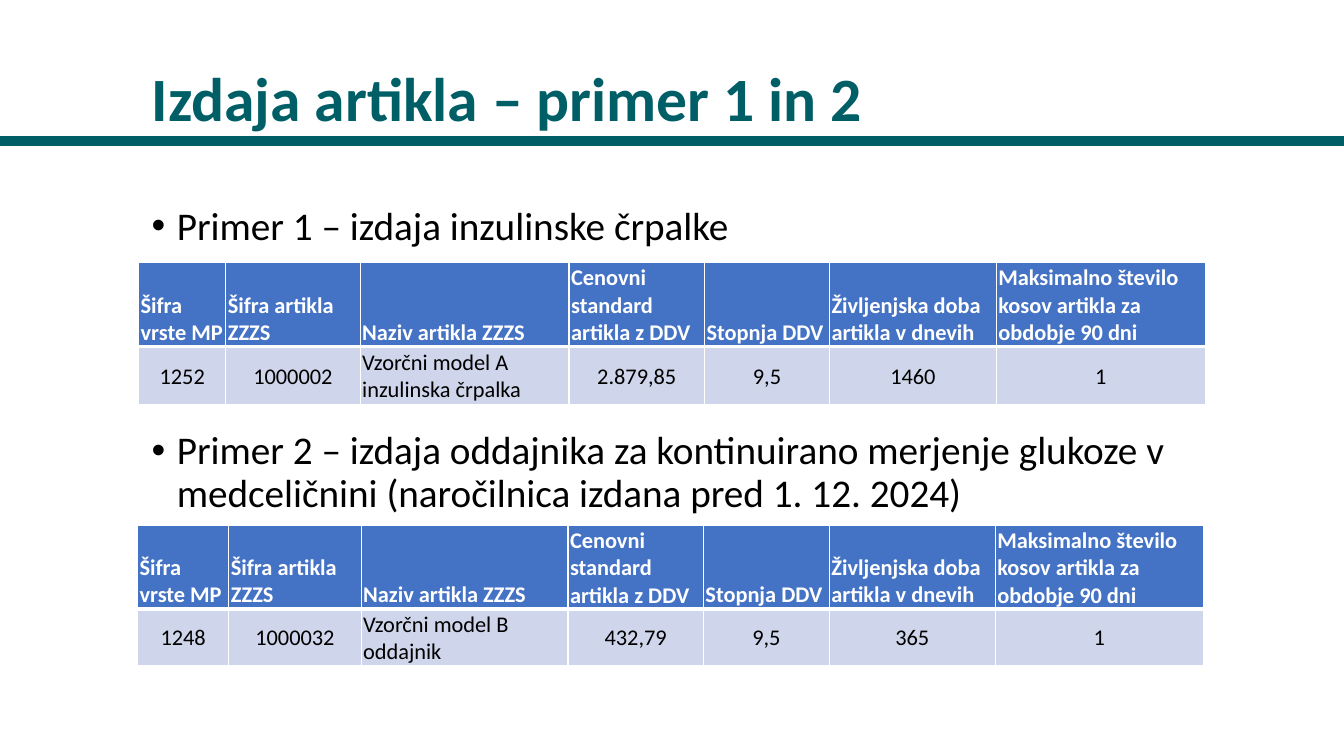
from lxml import etree
from pptx import Presentation, util as u
from pptx.dml.color import RGBColor
from pptx.enum import shapes, text
from pptx.oxml.ns import qn

TEAL, BLUE, PALE, WHITE, BLACK = "005E66", "4472C4", "CFD5EA", "FFFFFF", "000000"
HEADS = ["Šifra vrste MP", "Šifra artikla ZZZS", "Naziv artikla ZZZS",
         "Cenovni standard artikla z DDV", "Stopnja DDV",
         "Življenjska doba artikla v dnevih",
         "Maksimalno število kosov artikla za obdobje 90 dni"]
PUMP = ["1252", "1000002", "Vzorčni model A inzulinska črpalka", "2.879,85", "9,5", "1460", "1"]
SENDER = ["1248", "1000032", "Vzorčni model B oddajnik", "432,79", "9,5", "365", "1"]
NAME_COL = 2


def px(n):
    return u.Emu(n * 9525)


def rgb(code):
    return RGBColor.from_string(code)


class Deck:
    font = "Calibri"

    def __init__(self, width, height):
        self.prs = Presentation()
        self.prs.slide_width, self.prs.slide_height = px(width), px(height)
        self.slide = self.prs.slides.add_slide(self.prs.slide_layouts[5])

    def run(self, para, words, size, color, bold=False):
        run = para.add_run()
        run.text = words
        font = run.font
        font.name, font.size, font.bold = self.font, u.Pt(size), bold
        font.color.rgb = rgb(color)

    def title(self, words, x, y, w, h):
        box = self.slide.shapes.title
        box.left, box.top, box.width, box.height = map(px, (x, y, w, h))
        frame = box.text_frame
        frame.auto_size = text.MSO_AUTO_SIZE.NONE
        frame.vertical_anchor = text.MSO_ANCHOR.BOTTOM
        para = frame.paragraphs[0]
        para.alignment = text.PP_ALIGN.LEFT
        para.line_spacing = 0.9
        self.run(para, words, 44, TEAL, True)

    def line(self, x1, y1, x2, y2, color, weight):
        rule = self.slide.shapes.add_connector(
            shapes.MSO_CONNECTOR.STRAIGHT, *map(px, (x1, y1, x2, y2)))
        rule.line.color.rgb = rgb(color)
        rule.line.width = u.Pt(weight)
        etree.SubElement(rule._element.spPr, qn("a:effectLst"))

    def bullets(self, items, gap, x, y, w, h):
        """Write bulleted items with a gap in points between them."""
        frame = self.slide.shapes.add_textbox(*map(px, (x, y, w, h))).text_frame
        frame.word_wrap = True
        for i, words in enumerate(items):
            para = frame.add_paragraph() if i else frame.paragraphs[0]
            props = para._p.get_or_add_pPr()
            props.set("marL", str(px(24)))
            props.set("indent", str(-px(24)))
            etree.SubElement(props, qn("a:buFont"), typeface="Arial")
            etree.SubElement(props, qn("a:buChar"), char="•")
            para.line_spacing = 0.9
            if i:
                para.space_before = u.Pt(gap)
            self.run(para, words, 28, BLACK)

    def cell(self, cell, words, fill, color, head, center):
        cell.margin_left = cell.margin_right = cell.margin_top = px(2)
        cell.margin_bottom = 0
        cell.vertical_anchor = text.MSO_ANCHOR.BOTTOM if head else text.MSO_ANCHOR.MIDDLE
        props = cell._tc.get_or_add_tcPr()
        for side in "LRTB":
            # The rule between header and data is the thick one.
            thick = side == ("B" if head else "T")
            edge = etree.SubElement(props, qn("a:ln" + side),
                                    w=str(u.Pt(3 if thick else 1)))
            solid = etree.SubElement(edge, qn("a:solidFill"))
            etree.SubElement(solid, qn("a:srgbClr"), val=WHITE)
        cell.fill.solid()
        cell.fill.fore_color.rgb = rgb(fill)
        para = cell.text_frame.paragraphs[0]
        para.alignment = text.PP_ALIGN.CENTER if center else text.PP_ALIGN.LEFT
        self.run(para, words, 16, color, head)

    def table(self, data, x, y, cols, rows):
        grid = self.slide.shapes.add_table(
            len(rows), len(cols), *map(px, (x, y, sum(cols), sum(rows)))).table
        for col, width in zip(grid.columns, cols):
            col.width = px(width)
        for row, height in zip(grid.rows, rows):
            row.height = px(height)
        for i, (head, value) in enumerate(zip(HEADS, data)):
            self.cell(grid.cell(0, i), head, BLUE, WHITE, True, False)
            self.cell(grid.cell(1, i), value, PALE, BLACK, False, i != NAME_COL)


def main():
    deck = Deck(1280, 720)
    deck.line(0, 134, 1280, 134, TEAL, 7)
    deck.title("Izdaja artikla – primer 1 in 2", 135, 14, 1057, 119)
    deck.bullets(["Primer 1 – izdaja inzulinske črpalke",
                  "Primer 2 – izdaja oddajnika za kontinuirano merjenje glukoze v "
                  "medceličnini (naročilnica izdana pred 1. 12. 2024)"],
                 130, 135, 192, 1057, 457)
    deck.table(PUMP, 132, 250, [83, 128, 199, 129, 119, 159, 199], [80, 55])
    deck.table(SENDER, 131, 500, [87, 126, 197, 129, 120, 158, 198], [80, 54])
    deck.prs.save("out.pptx")


if __name__ == "__main__":
    main()
